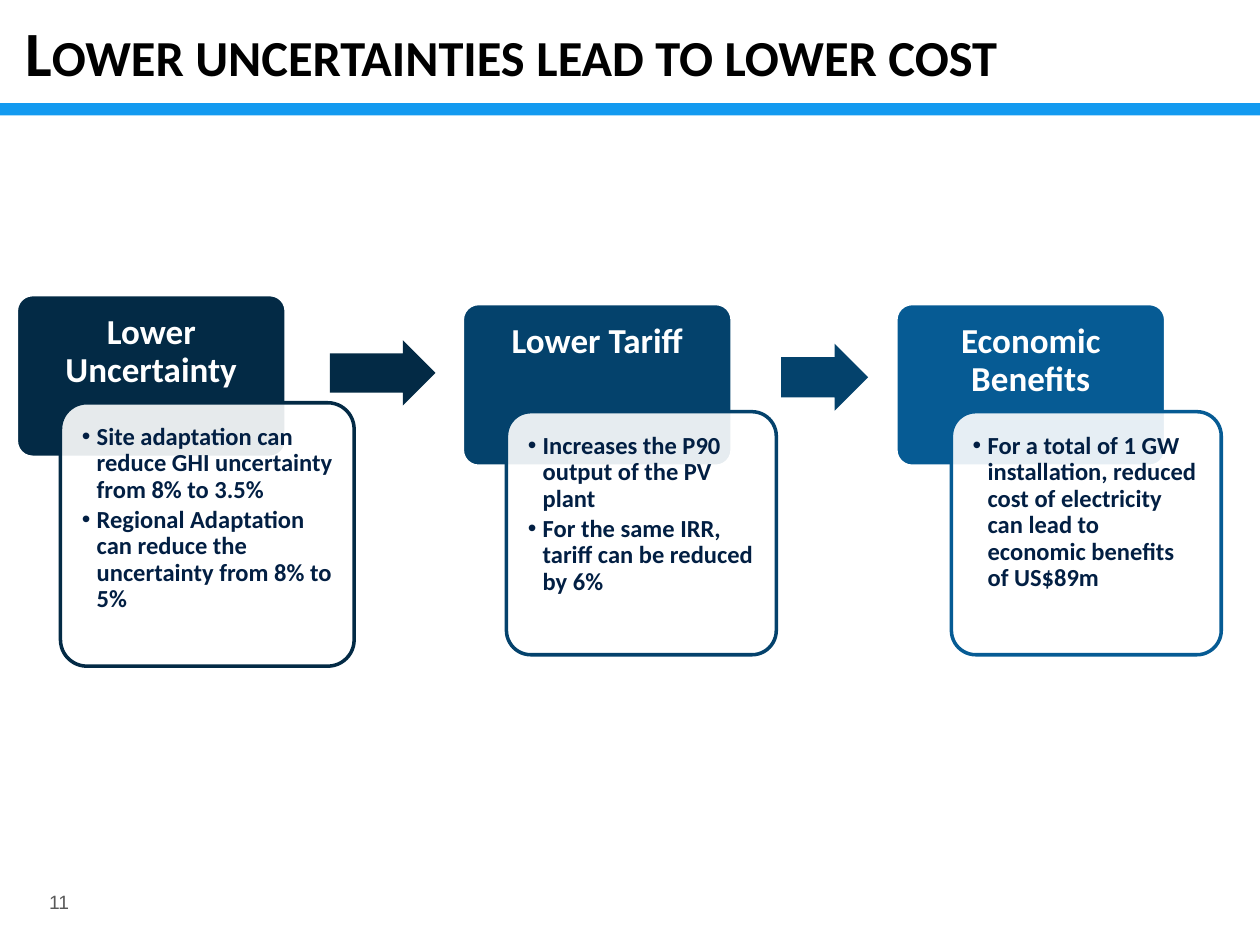
from lxml import etree
from pptx import Presentation
from pptx.dml.color import RGBColor
from pptx.enum.shapes import MSO_SHAPE
from pptx.enum.text import MSO_ANCHOR, PP_ALIGN
from pptx.oxml.ns import qn
from pptx.util import Cm, Pt

RECTANGLE = MSO_SHAPE.RECTANGLE
ROUNDED = MSO_SHAPE.ROUNDED_RECTANGLE
RIGHT_ARROW = MSO_SHAPE.RIGHT_ARROW
TOP, MIDDLE, BOTTOM = MSO_ANCHOR.TOP, MSO_ANCHOR.MIDDLE, MSO_ANCHOR.BOTTOM
LEFT, CENTER = PP_ALIGN.LEFT, PP_ALIGN.CENTER

SLIDE_WIDTH, SLIDE_HEIGHT = 25.4, 19.05
HEADING_WIDTH, HEADING_HEIGHT = 5.44, 3.28
HEADING_TEXT_HEIGHT = 2.18
DETAIL_INSET = 0.15
WHITE, BODY_INK = "FFFFFF", "021F43"
NAVY, MARINE, OCEAN = "032A45", "04426C", "065B94"

STEPS = [
    ((0.33, 5.94), (0.89, 5.92, 5.31), NAVY, "Lower Uncertainty", [
        "Site adaptation can reduce GHI uncertainty from 8% to 3.5%",
        "Regional Adaptation can reduce the uncertainty from 8% to 5%",
    ]),
    ((9.32, 6.12), (0.89, 5.44, 4.9), MARINE, "Lower Tariff", [
        "Increases the P90 output of the PV plant",
        "For the same IRR, tariff can be reduced by 6%",
    ]),
    ((18.06, 6.12), (1.12, 5.44, 4.9), OCEAN, "Economic Benefits", [
        "For a total of 1 GW installation, reduced cost of electricity "
        "can lead to economic benefits of US$89m",
    ]),
]
ARROWS = [((6.65, 6.86, 2.13, 1.32), NAVY), ((15.75, 6.93, 1.75, 1.35), MARINE)]


def rgb(value):
    return RGBColor.from_string(value)


def add_block(slide, preset, box, fill, outline=None, adjustments=()):
    block = slide.shapes.add_shape(preset, *map(Cm, box))
    block.shadow.inherit = False
    block.fill.solid()
    block.fill.fore_color.rgb = rgb(fill)
    if outline:
        block.line.color.rgb = rgb(outline)
        block.line.width = Pt(2)
    else:
        block.line.fill.background()
    for index, amount in enumerate(adjustments):
        block.adjustments[index] = amount
    return block


def add_text(slide, box, lines, size, color, font="Calibri", bold=True,
             anchor=TOP, align=LEFT, margins=(0, 0, 0, 0)):
    frame = slide.shapes.add_textbox(*map(Cm, box)).text_frame
    frame.word_wrap = True
    frame.vertical_anchor = anchor
    (frame.margin_left, frame.margin_top,
     frame.margin_right, frame.margin_bottom) = map(Cm, margins)
    frame.text = "\n".join(lines)
    for paragraph in frame.paragraphs:
        paragraph.alignment = align
        for run in paragraph.runs:
            run.font.name = font
            run.font.size = Pt(size)
            run.font.bold = bold
            run.font.color.rgb = rgb(color)
    return frame.paragraphs


def add_bullet(paragraph):
    properties = paragraph._p.get_or_add_pPr()
    properties.set("marL", str(Cm(0.3)))
    properties.set("indent", str(-Cm(0.3)))
    etree.SubElement(properties, qn("a:buFont")).set("typeface", "Arial")
    etree.SubElement(properties, qn("a:buChar")).set("char", "•")


def make_translucent(block, percent):
    color = block.fill._xPr.find(qn("a:solidFill"))[0]
    etree.SubElement(color, qn("a:alpha")).set("val", str(percent * 1000))


def add_header(slide, box):
    left, top, width, height = box
    add_block(slide, RECTANGLE, (left, top + 2.08, width, height - 2.08), "139AF0")
    title = add_text(slide, (left, top, width, 1.8),
                     ["Lower uncertainties lead to lower cost"], 36, "000000",
                     anchor=BOTTOM, margins=(0.51, 0, 0, 0))[0]
    title.runs[0].font._element.set("cap", "small")


def add_step(slide, origin, detail, color, heading, points):
    left, top = origin
    offset, width, height = detail
    add_block(slide, ROUNDED, (left, top, HEADING_WIDTH, HEADING_HEIGHT),
              color, WHITE, [0.1])
    title = add_text(slide, (left, top, HEADING_WIDTH, HEADING_TEXT_HEIGHT),
                     [heading], 20, WHITE, align=CENTER,
                     margins=(0.4, 0.4, 0.4, 0.2))[0]
    title.line_spacing = 0.9
    title.space_after = Pt(7)

    detail_left, detail_top = left + offset, top + HEADING_TEXT_HEIGHT
    panel = add_block(slide, ROUNDED, (detail_left, detail_top, width, height),
                      WHITE, color, [0.1])
    make_translucent(panel, 90)
    inner = (detail_left + DETAIL_INSET, detail_top + DETAIL_INSET,
             width - 2 * DETAIL_INSET, height - 2 * DETAIL_INSET)
    for point in add_text(slide, inner, points, 14, BODY_INK, margins=(0.28,) * 4):
        point.line_spacing = 0.9
        point.space_after = Pt(2)
        add_bullet(point)


def add_flow(slide):
    for index, step in enumerate(STEPS):
        add_step(slide, *step)
        if index < len(ARROWS):
            box, color = ARROWS[index]
            add_block(slide, RIGHT_ARROW, box, color, adjustments=[0.6, 0.5])


def add_page_number(slide, box):
    add_text(slide, box, ["11"], 11, "595959", font="Arial", bold=False, anchor=MIDDLE)


def main():
    deck = Presentation()
    deck.slide_width, deck.slide_height = Cm(SLIDE_WIDTH), Cm(SLIDE_HEIGHT)
    slide = deck.slides.add_slide(deck.slide_layouts[6])
    add_header(slide, (0, 0, SLIDE_WIDTH, 2.33))
    add_page_number(slide, (0.99, 17.68, 0.89, 1.02))
    add_flow(slide)
    deck.save("out.pptx")


if __name__ == "__main__":
    main()
